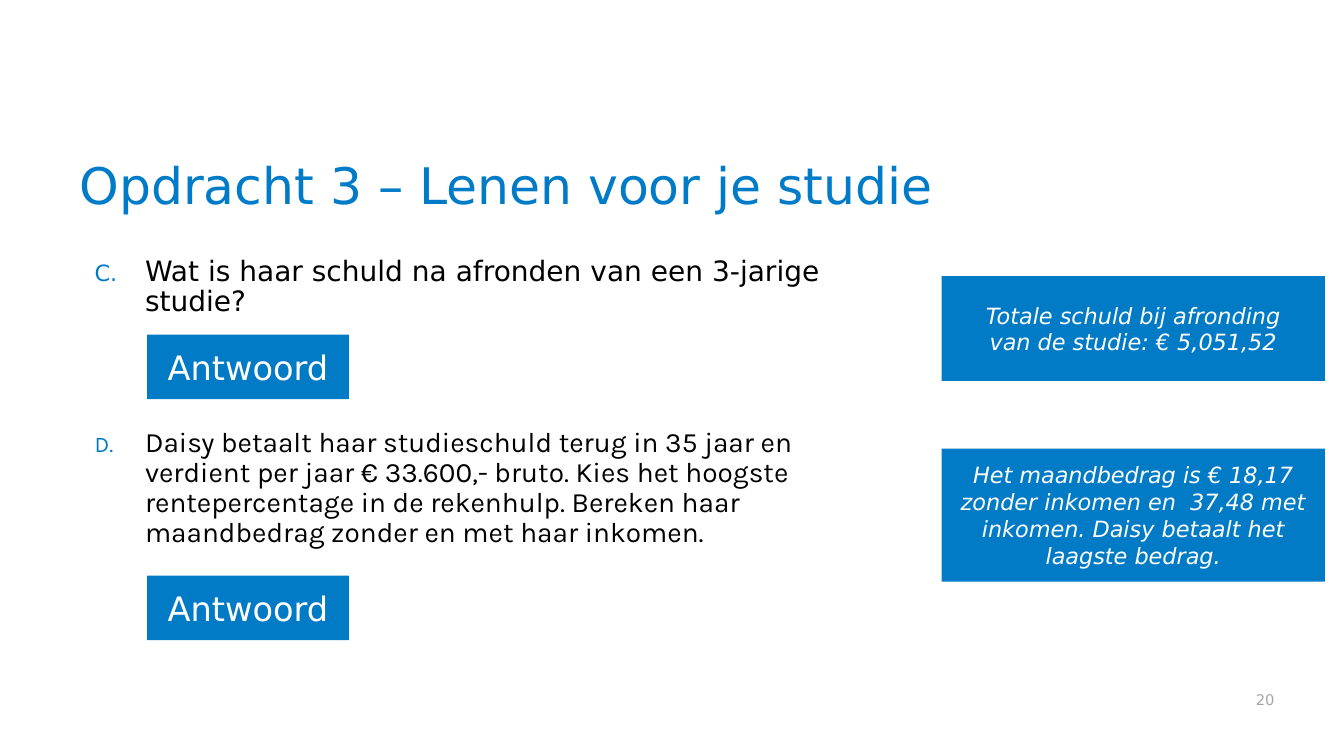
from lxml import etree
from pptx import Presentation
from pptx.dml.color import RGBColor
from pptx.enum.shapes import MSO_SHAPE
from pptx.enum.text import MSO_ANCHOR, MSO_AUTO_SIZE, PP_ALIGN
from pptx.oxml.ns import qn
from pptx.util import Inches, Pt

RECTANGLE = MSO_SHAPE.RECTANGLE
LEFT, CENTER, RIGHT = PP_ALIGN.LEFT, PP_ALIGN.CENTER, PP_ALIGN.RIGHT
TOP, MIDDLE, BOTTOM = MSO_ANCHOR.TOP, MSO_ANCHOR.MIDDLE, MSO_ANCHOR.BOTTOM

# Content
TITLE = "Opdracht 3 – Lenen voor je studie"
PAGE_NUMBER = "20"
FIRST_LETTER = 3
# Question, font, space before in points
QUESTIONS = [
    ("Wat is haar schuld na afronden van een 3-jarige studie?", "DejaVu Sans", 0),
    ("Daisy betaalt haar studieschuld terug in 35 jaar en verdient per jaar "
     "€ 33.600,- bruto. Kies het hoogste rentepercentage in de rekenhulp. "
     "Bereken haar maandbedrag zonder en met haar inkomen.", "Karla", 79),
]
BUTTON_TEXT = "Antwoord"
BUTTON_TOPS = [3.32, 5.71]
# Top, height, lines
ANSWERS = [
    (2.74, 1.04, ["Totale schuld bij afronding",
                  "van de studie: € 5,051,52"]),
    (4.45, 1.32, ["Het maandbedrag is € 18,17 zonder inkomen en  37,48 met "
                  "inkomen. Daisy betaalt het laagste bedrag."]),
]

FONT = "DejaVu Sans"
BLUE, TITLE_BLUE = "017BC6", "007BC7"
BLACK, WHITE, GREY = "000000", "FFFFFF", "A6A6A6"


def color(value):
    return RGBColor.from_string(value)


def place(shape, left, top, width, height):
    shape.left, shape.top = Inches(left), Inches(top)
    shape.width, shape.height = Inches(width), Inches(height)


def set_frame(frame, anchor):
    frame.word_wrap = True
    frame.auto_size = MSO_AUTO_SIZE.NONE
    frame.vertical_anchor = anchor


def add_span(para, text, size, ink, font=FONT, italic=False):
    span = para.add_run()
    span.text = text
    span.font.name, span.font.size = font, Pt(size)
    span.font.color.rgb = color(ink)
    span.font.italic = italic


def add_letter(para, start):
    """Number a paragraph with blue capital letters."""
    props = para._p.get_or_add_pPr()
    props.set("marL", str(Inches(0.65)))
    props.set("indent", str(Inches(-0.5)))
    tint = etree.SubElement(props, qn("a:buClr"))
    etree.SubElement(tint, qn("a:srgbClr"), val=BLUE)
    etree.SubElement(props, qn("a:buSzPct"), val="80000")
    etree.SubElement(props, qn("a:buAutoNum"), type="alphaUcPeriod", startAt=str(start))


def add_panel(page, bounds, lines, size, italic=False):
    panel = page.shapes.add_shape(RECTANGLE, *map(Inches, bounds))
    panel.shadow.inherit = False
    panel.fill.solid()
    panel.fill.fore_color.rgb = color(BLUE)
    panel.line.fill.background()
    frame = panel.text_frame
    set_frame(frame, MIDDLE)
    for index, line in enumerate(lines):
        para = frame.add_paragraph() if index else frame.paragraphs[0]
        para.alignment = CENTER
        add_span(para, line, size, WHITE, italic=italic)


deck = Presentation()
deck.slide_width, deck.slide_height = Inches(13.33), Inches(7.5)
page = deck.slides.add_slide(deck.slide_layouts[5])

# Title
title = page.shapes.title
place(title, 0.69, 1.15, 11.95, 1.04)
set_frame(title.text_frame, BOTTOM)
para = title.text_frame.paragraphs[0]
para.alignment, para.line_spacing = LEFT, 0.9
add_span(para, TITLE, 36, TITLE_BLUE)

# Questions
box = page.shapes.add_textbox(*map(Inches, (0.69, 2.5, 8.36, 4.3)))
frame = box.text_frame
set_frame(frame, TOP)
for index, (question, font, gap) in enumerate(QUESTIONS):
    para = frame.add_paragraph() if index else frame.paragraphs[0]
    add_letter(para, FIRST_LETTER)
    para.line_spacing, para.space_before = 0.9, Pt(gap)
    add_span(para, question, 20, BLACK, font)

# Page number
box = page.shapes.add_textbox(*map(Inches, (7.17, 6.8, 5.47, 0.35)))
set_frame(box.text_frame, TOP)
box.text_frame.margin_right = 0
para = box.text_frame.paragraphs[0]
para.alignment = RIGHT
add_span(para, PAGE_NUMBER, 10.5, GREY)

# Answer buttons and answers
for top in BUTTON_TOPS:
    add_panel(page, (1.46, top, 2, 0.64), [BUTTON_TEXT], 24)
for top, height, lines in ANSWERS:
    add_panel(page, (9.34, top, 3.8, height), lines, 16, italic=True)

deck.save("out.pptx")
